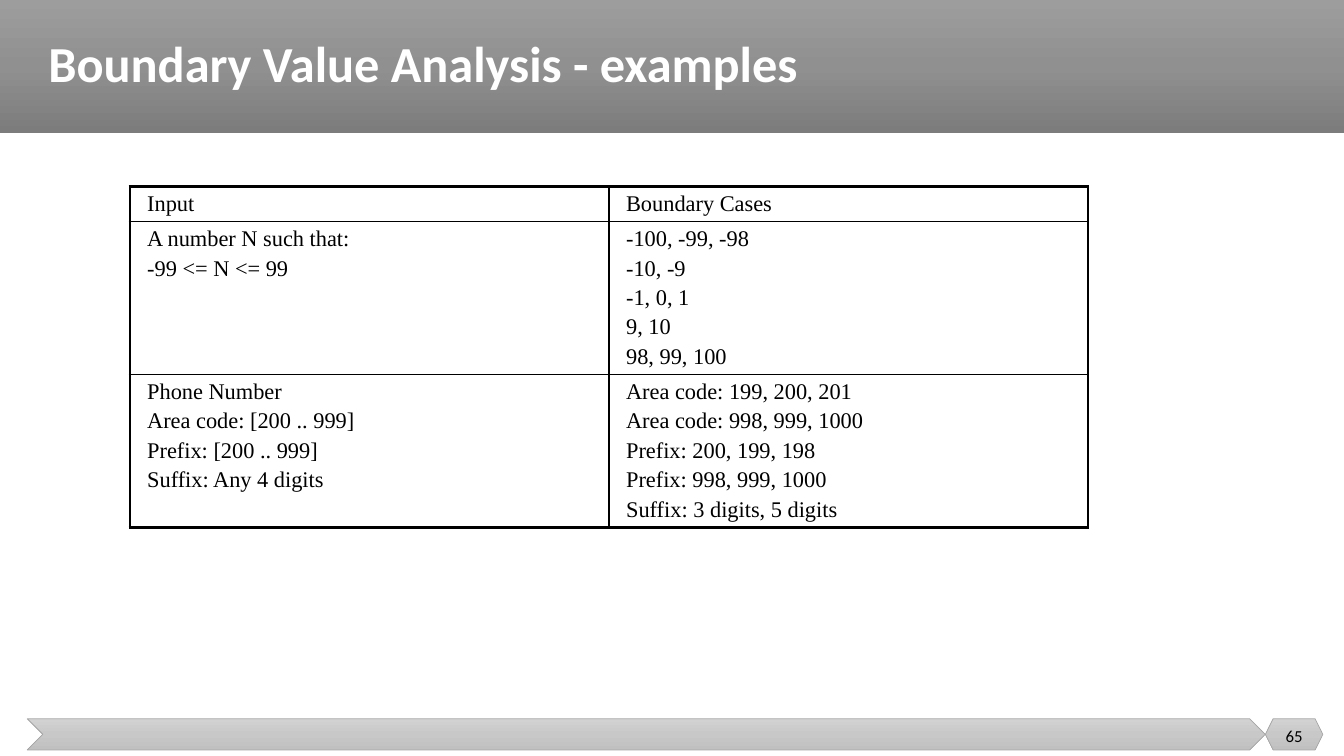
"""Build the slide of boundary value analysis examples."""
from copy import deepcopy
from dataclasses import dataclass

from lxml import etree
from pptx import Presentation
from pptx import util as u
from pptx.dml.color import RGBColor
from pptx.enum import shapes, text
from pptx.oxml import ns

COLORS = {
    "white": "FFFFFF", "black": "000000", "edge": "A5A5A5",
    "band_top": "9D9D9D", "band_mid": "909090", "band_low": "7C7C7C",
    "bar_top": "D2D2D2", "bar_mid": "C8C8C8", "bar_low": "C0C0C0",
}
BAND = ("band_top", "band_mid", "band_low")
BAR = ("bar_top", "bar_mid", "bar_low")
THIN, THICK = 1, 2.25

prs = Presentation()
prs.slide_width, prs.slide_height = u.Inches(13.33), u.Inches(7.5)


def across(percent: float) -> int:
    """Turn a percentage of the slide width into a length."""
    return round(prs.slide_width * percent / 100)


def down(percent: float) -> int:
    """Turn a percentage of the slide height into a length."""
    return round(prs.slide_height * percent / 100)


@dataclass(frozen=True)
class Box:
    """Hold a place in percentages of the slide."""
    left: float
    top: float
    width: float
    height: float

    def lengths(self) -> dict[str, int]:
        """Give the place as shape attributes."""
        return {"left": across(self.left), "top": down(self.top),
                "width": across(self.width), "height": down(self.height)}


@dataclass(frozen=True)
class Panel:
    """Describe a shape with a vertical gradient."""
    kind: shapes.MSO_SHAPE
    box: Box
    stops: tuple[str, str, str]
    outlined: bool = True


@dataclass(frozen=True)
class Font:
    """Describe the look of a run."""
    name: str
    size: float
    color: str
    bold: bool = False


@dataclass(frozen=True)
class Example:
    """Pair the lines of an input with its boundary cases."""
    height: float
    inputs: tuple[str, ...]
    cases: tuple[str, ...]


PANELS = (
    Panel(shapes.MSO_SHAPE.RECTANGLE, Box(0, 0, 100, 17.6), BAND, False),
    Panel(shapes.MSO_SHAPE.CHEVRON, Box(2.03, 95.07, 92.12, 4.13), BAR),
    Panel(shapes.MSO_SHAPE.HEXAGON, Box(94.15, 95.07, 4.28, 4.13), BAR),
)
TITLE_BOX = Box(2.85, 0, 95.57, 17.6)
NUMBER_BOX = Box(94.15, 94.67, 4.28, 5.33)
TITLE_FONT = Font("Calibri", 36, "white", True)
NUMBER_FONT = Font("Calibri", 12, "black")
CELL_FONT = Font("Times New Roman", 16, "black")
EXAMPLES = (
    Example(4.67, ("Input",), ("Boundary Cases",)),
    Example(20.2, ("A number N such that:", "-99 <= N <= 99"),
            ("-100, -99, -98", "-10, -9", "-1, 0, 1", "9, 10", "98, 99, 100")),
    Example(20.2, ("Phone Number", "Area code: [200 .. 999]",
                   "Prefix: [200 .. 999]", "Suffix: Any 4 digits"),
            ("Area code: 199, 200, 201", "Area code: 998, 999, 1000",
             "Prefix: 200, 199, 198", "Prefix: 998, 999, 1000",
             "Suffix: 3 digits, 5 digits")),
)
TABLE_BOX = Box(9.68, 24.67, 71.27, sum(e.height for e in EXAMPLES))


def apply(target: object, values: dict) -> None:
    """Set attributes from a dict of values."""
    for name, value in values.items():
        setattr(target, name, value)


def rgb(color: str) -> RGBColor:
    """Look up a named colour."""
    return RGBColor.from_string(COLORS[color])


def write(p, words: str, font: Font) -> None:
    """Add a formatted run to a paragraph."""
    r = p.add_run()
    r.text = words
    apply(r.font, {"name": font.name, "size": u.Pt(font.size), "bold": font.bold})
    r.font.color.rgb = rgb(font.color)


def draw_panel(s, panel: Panel) -> None:
    """Draw a shape with three gradient stops."""
    sp = s.shapes.add_shape(panel.kind, **panel.box.lengths())
    sp.shadow.inherit = False
    sp.fill.gradient()
    sp.fill.gradient_angle = 270
    stop_list = sp._element.spPr.find(".//" + ns.qn("a:gsLst"))
    stop_list.insert(1, deepcopy(stop_list[0]))
    for i, (stop, color) in enumerate(zip(sp.fill.gradient_stops, panel.stops)):
        stop.position = i / 2
        stop.color.rgb = rgb(color)
    if panel.outlined:
        sp.line.color.rgb = rgb("edge")
        sp.line.width = u.Pt(0.5)
    else:
        sp.line.fill.background()


def draw_title(s) -> None:
    """Place the title in front of its band."""
    sp = s.shapes.title
    apply(sp, TITLE_BOX.lengths())
    tf = sp.text_frame
    apply(tf, {"vertical_anchor": text.MSO_ANCHOR.MIDDLE, "word_wrap": True,
               "auto_size": text.MSO_AUTO_SIZE.NONE})
    p = tf.paragraphs[0]
    apply(p, {"alignment": text.PP_ALIGN.LEFT, "line_spacing": 0.9})
    write(p, "Boundary Value Analysis - examples", TITLE_FONT)
    s.shapes._spTree.append(sp._element)


def draw_borders(cell, widths: dict[str, float]) -> None:
    """Give a cell its four borders."""
    props = cell._tc.get_or_add_tcPr()
    for i, (side, width) in enumerate(widths.items()):
        ln = etree.Element(ns.qn(f"a:ln{side}"), w=str(u.Pt(width)))
        fill = etree.SubElement(ln, ns.qn("a:solidFill"))
        etree.SubElement(fill, ns.qn("a:srgbClr"), val=COLORS["black"])
        props.insert(i, ln)


def fill_cell(cell, lines: tuple[str, ...]) -> None:
    """Write the lines of a cell, each spaced by a fifth of a line."""
    side, edge = u.Inches(0.17), u.Inches(0.05)
    apply(cell, {"margin_left": side, "margin_right": side,
                 "margin_top": edge, "margin_bottom": edge})
    cell.fill.background()
    tf = cell.text_frame
    for i, line in enumerate(lines):
        p = tf.add_paragraph() if i else tf.paragraphs[0]
        before = etree.SubElement(p._p.get_or_add_pPr(), ns.qn("a:spcBef"))
        etree.SubElement(before, ns.qn("a:spcPct"), val="20000")
        write(p, line, CELL_FONT)


def draw_table(s) -> None:
    """Draw the examples with a thick outer frame."""
    last = len(EXAMPLES) - 1
    table = s.shapes.add_table(len(EXAMPLES), 2, **TABLE_BOX.lengths()).table
    apply(table, {"first_row": False, "horz_banding": False})
    for row, example in enumerate(EXAMPLES):
        table.rows[row].height = down(example.height)
        for col, lines in enumerate((example.inputs, example.cases)):
            cell = table.cell(row, col)
            fill_cell(cell, lines)
            outer = {"L": col == 0, "R": col == 1, "T": row == 0, "B": row == last}
            draw_borders(cell, {k: THICK if v else THIN for k, v in outer.items()})


def draw_number(s) -> None:
    """Write the page number on the hexagon."""
    tf = s.shapes.add_textbox(**NUMBER_BOX.lengths()).text_frame
    apply(tf, {"word_wrap": True, "vertical_anchor": text.MSO_ANCHOR.MIDDLE})
    p = tf.paragraphs[0]
    p.alignment = text.PP_ALIGN.CENTER
    write(p, "65", NUMBER_FONT)


if __name__ == "__main__":
    s = prs.slides.add_slide(prs.slide_layouts.get_by_name("Title Only"))
    for panel in PANELS:
        draw_panel(s, panel)
    draw_title(s)
    draw_table(s)
    draw_number(s)
    prs.save("out.pptx")
